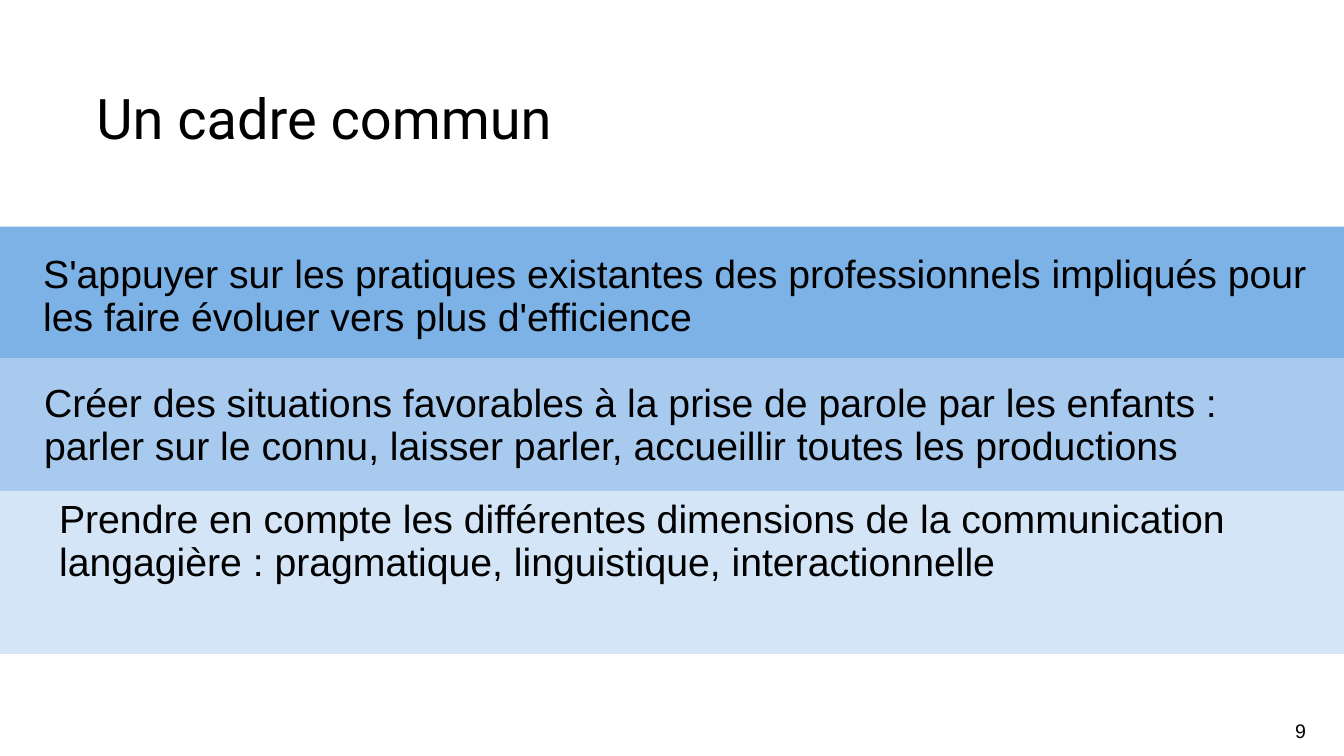
from pptx import Presentation
from pptx import util as u
from pptx.dml.color import RGBColor
from pptx.enum import shapes, text

COLOURS = {
    "ink": "000000",
    "practices": "7CB2E6",
    "situations": "A8CAEE",
    "dimensions": "D3E5F6",
}
BLEED = 0.89
SLIDE_WIDTH = 33.87
BANDS_TOP = 5.71

PRINCIPLES = [
    ("practices", 3.33, (0.84, 6.3, 33.07, 3.33),
     "S'appuyer sur les pratiques existantes des professionnels impliqués pour "
     "les faire évoluer vers plus d'efficience"),
    ("situations", 3.33, (0.86, 9.55, 32.16, 1.73),
     "Créer des situations favorables à la prise de parole par les enfants : "
     "parler sur le connu, laisser parler, accueillir toutes les productions"),
    ("dimensions", 4.11, (1.24, 12.47, 32.13, 3.33),
     "Prendre en compte les différentes dimensions de la communication "
     "langagière : pragmatique, linguistique, interactionnelle"),
]


def add_band(slide, top, height, colour):
    band = slide.shapes.add_shape(
        shapes.MSO_SHAPE.RECTANGLE,
        u.Cm(-BLEED), u.Cm(top), u.Cm(SLIDE_WIDTH + 2 * BLEED), u.Cm(height))
    band.shadow.inherit = False
    band.fill.solid()
    band.fill.fore_color.rgb = RGBColor.from_string(COLOURS[colour])
    band.line.fill.background()


def add_wording(slide, place, wording, size, font="Arial", spacing=0.9,
                anchor=text.MSO_ANCHOR.TOP):
    frame = slide.shapes.add_textbox(*map(u.Cm, place)).text_frame
    frame_format = {"word_wrap": True, "vertical_anchor": anchor}
    for attribute, value in frame_format.items():
        setattr(frame, attribute, value)
    paragraph = frame.paragraphs[0]
    paragraph.line_spacing = spacing
    run = paragraph.add_run()
    run.text = wording
    for attribute, value in {"name": font, "size": u.Pt(size)}.items():
        setattr(run.font, attribute, value)
    run.font.color.rgb = RGBColor.from_string(COLOURS["ink"])


def main():
    deck = Presentation()
    deck.slide_width, deck.slide_height = u.Cm(SLIDE_WIDTH), u.Cm(19.05)
    slide = deck.slides.add_slide(deck.slide_layouts[6])

    add_wording(slide, (2.18, 1.4, 28.78, 2.54), "Un cadre commun", 40,
                font="Roboto", anchor=text.MSO_ANCHOR.BOTTOM)
    band_top = BANDS_TOP
    for colour, height, place, principle in PRINCIPLES:
        add_band(slide, band_top, height, colour)
        add_wording(slide, place, principle, 28)
        band_top += height
    add_wording(slide, (32.39, 17.98, 1.45, 0.86), "9", 14, spacing=1.0)

    deck.save("out.pptx")


if __name__ == "__main__":
    main()
